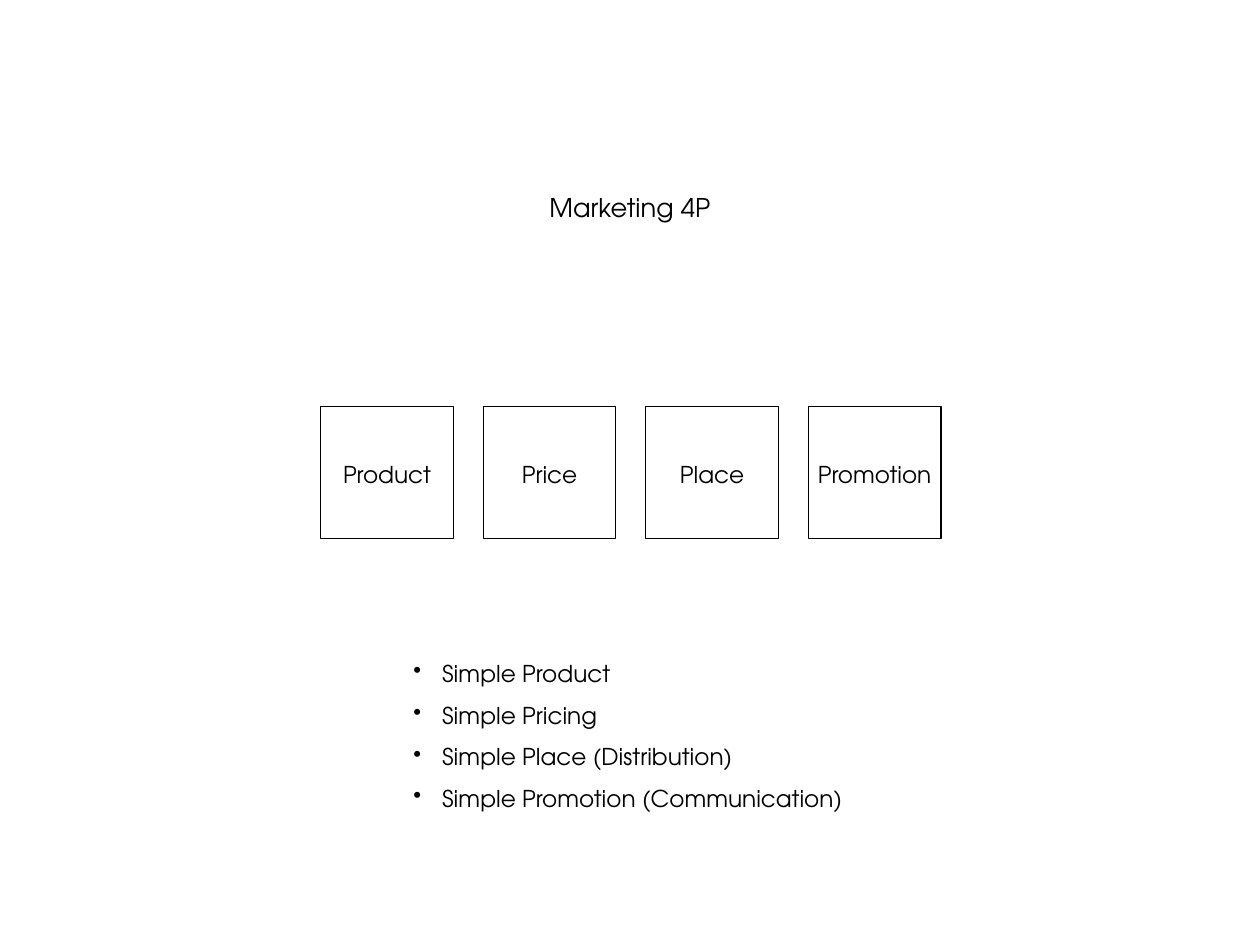
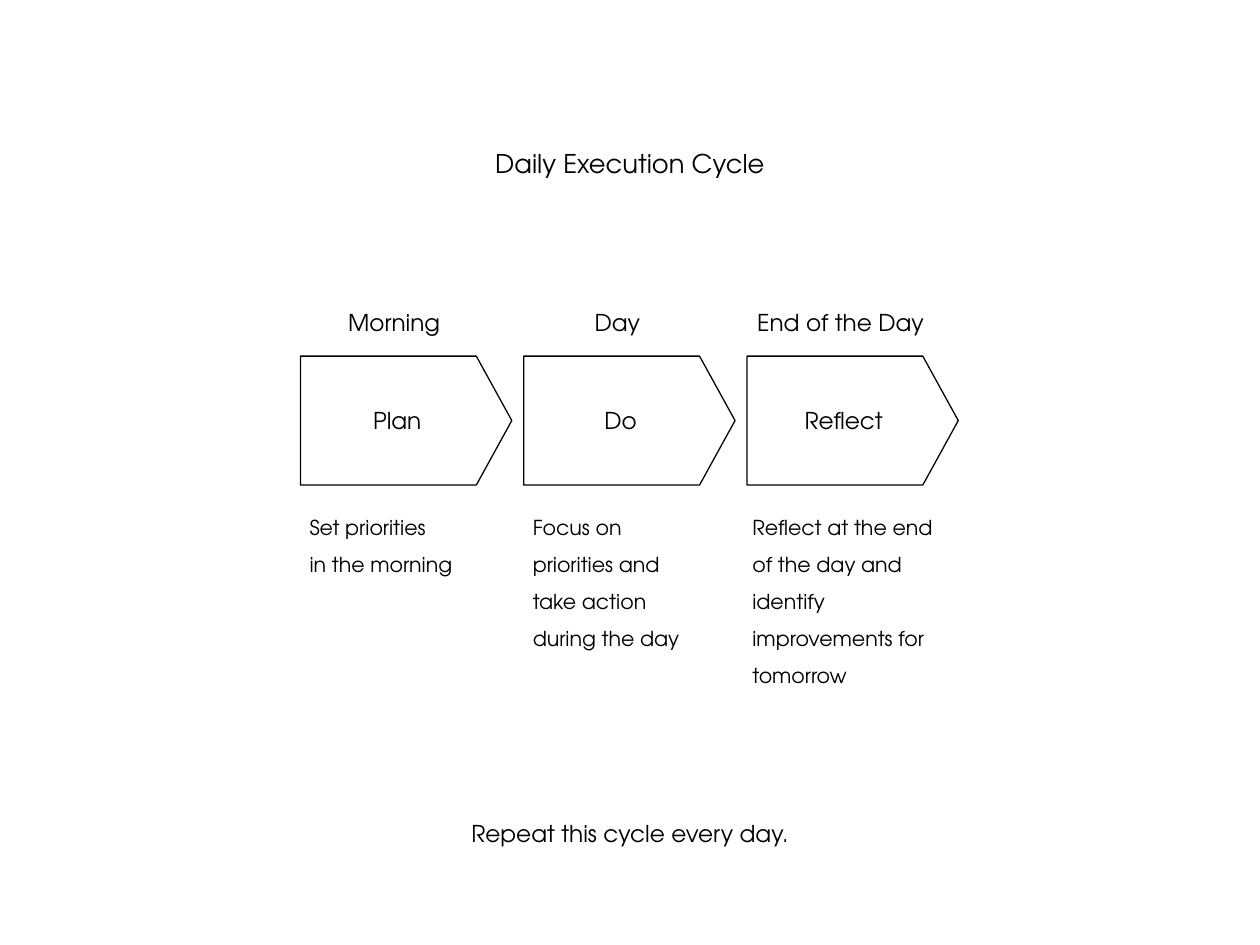
from lxml import etree
from pptx import Presentation
from pptx.dml.color import RGBColor
from pptx.enum.shapes import MSO_SHAPE
from pptx.enum.text import MSO_ANCHOR, MSO_AUTO_SIZE, PP_ALIGN
from pptx.oxml.ns import qn
from pptx.util import Inches, Pt

RECT, ARROW = MSO_SHAPE.RECTANGLE, MSO_SHAPE.PENTAGON
TOP, MIDDLE = MSO_ANCHOR.TOP, MSO_ANCHOR.MIDDLE
LEFT, CENTER = PP_ALIGN.LEFT, PP_ALIGN.CENTER
FIXED = MSO_AUTO_SIZE.NONE

COLORS = {"ink": "000000", "paper": "FFFFFF"}
FONT = "TeX Gyre Adventor"
SIZES = {"title": 20, "body": 18, "note": 16}
# The grid has square cells of a tenth of an inch
CELL = 0.1
COLS, ROWS = 135.9, 101.9


def color(name):
    return RGBColor.from_string(COLORS[name])


def grid(*cells):
    return [Inches(n * CELL) for n in cells]


class Deck:
    def __init__(self):
        self.prs = Presentation()
        self.prs.slide_width, self.prs.slide_height = grid(COLS, ROWS)
        self.slide = None

    def page(self, title, row):
        """Start a slide with a centred title at the given row."""
        layout = self.prs.slide_layouts[5]
        self.slide = self.prs.slides.add_slide(layout)
        head = self.slide.shapes.title
        wide = 60
        head.left, head.top, head.width, head.height = grid(
            (COLS - wide) / 2, row, wide, 4.4)
        self.label(head, [title], "title", CENTER)

    def label(self, shape, lines, size="body", align=LEFT, anchor=TOP,
              wrap=True, space=None, bullet=None):
        """Fill a shape with one paragraph for each line."""
        frame = shape.text_frame
        frame.auto_size = FIXED
        frame.word_wrap = wrap
        frame.vertical_anchor = anchor
        for i, line in enumerate(lines):
            para = frame.add_paragraph() if i else frame.paragraphs[0]
            para.text = line
            para.alignment = align
            if bullet:
                self.mark(para, bullet)
            if space:
                para.line_spacing = space
            font = para.font
            font.name, font.size = FONT, Pt(SIZES[size])
            font.color.rgb = color("ink")

    def mark(self, para, bullet):
        """Give a paragraph a bullet and a hanging indent."""
        props = para._p.get_or_add_pPr()
        indent, = grid(3.1)
        props.set("marL", str(indent))
        props.set("indent", str(-indent))
        etree.SubElement(props, qn("a:buChar")).set("char", bullet)

    def text(self, x, y, w, h, lines, **style):
        box = self.slide.shapes.add_textbox(*grid(x, y, w, h))
        self.label(box, lines, **style)

    def block(self, kind, x, y, w, h, name, fill=None):
        """Draw an outlined shape with a centred name."""
        shape = self.slide.shapes.add_shape(kind, *grid(x, y, w, h))
        shape.shadow.inherit = False
        if fill:
            shape.fill.solid()
            shape.fill.fore_color.rgb = color(fill)
        else:
            shape.fill.background()
        shape.line.color.rgb = color("ink")
        shape.line.width = Pt(1)
        self.label(shape, [name], align=CENTER, anchor=MIDDLE, wrap=False)
        return shape


def mix(deck):
    deck.page("Marketing 4P", 20.2)
    # Row of four squares
    side, step = 14.3, 17.53
    for i, name in enumerate(["Product", "Price", "Place", "Promotion"]):
        box = deck.block(RECT, 34.6 + i * step, 43.8, side, side, name)
        box.text_frame.margin_top, = grid(0.9)
    # Bullet list
    deck.text(43.6, 69.1, 48.8, 18.6, [
        "Simple Product",
        "Simple Pricing",
        "Simple Place (Distribution)",
        "Simple Promotion (Communication)",
    ], wrap=False, space=1.5, bullet="•")


def cycle(deck):
    deck.page("Daily Execution Cycle", 15.4)
    # Each step: time, action, note, note shift, note width
    steps = [
        ("Morning", "Plan", "Set priorities\nin the morning", 0, 22.8),
        ("Day", "Do", "Focus on priorities and take action "
         "during the day", 0, 20.8),
        ("End of the Day", "Reflect", "Reflect at the end of the day and "
         "identify improvements for tomorrow", -0.4, 23.2),
    ]
    for i, (time, action, note, shift, wide) in enumerate(steps):
        x = 32.4 + i * 24.08
        deck.text(x, 32.8, 20.2, 4, [time], align=CENTER, wrap=False)
        arrow = deck.block(ARROW, x, 38.4, 22.8, 13.9, action, "paper")
        arrow.adjustments[0] = 0.275
        deck.text(x + shift, 53.7, wide, 20.8, [note], size="note", space=1.5)
    # Closing line
    wide = 40
    deck.text((COLS - wide) / 2, 87.9, wide, 4,
              ["Repeat this cycle every day."], align=CENTER)


def main():
    deck = Deck()
    mix(deck)
    cycle(deck)
    deck.prs.save("out.pptx")


if __name__ == "__main__":
    main()
